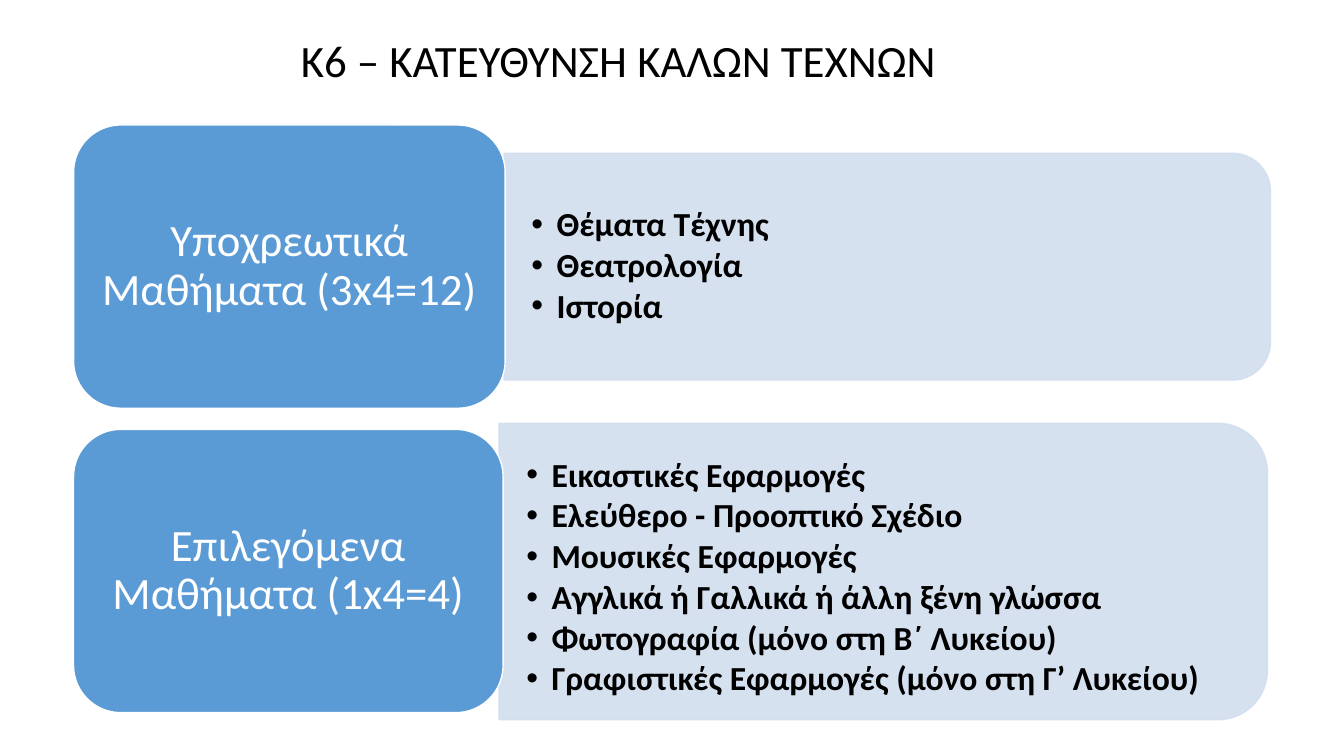
import pptx
import pptx.util
import pptx.dml.color
import pptx.enum.shapes
import pptx.enum.text
import pptx.oxml.ns
import lxml.etree

Inches, Pt = pptx.util.Inches, pptx.util.Pt
RGBColor = pptx.dml.color.RGBColor
Kind = pptx.enum.shapes.MSO_SHAPE
Align = pptx.enum.text.PP_ALIGN
qn = pptx.oxml.ns.qn

BLACK = RGBColor(0x00, 0x00, 0x00)
WHITE = RGBColor(0xFF, 0xFF, 0xFF)
BLUE = RGBColor(0x5B, 0x9B, 0xD5)
PALE = RGBColor(0xD2, 0xDE, 0xEF)

LEFT = 0.73    # left edge of the label column
TALL = 2.81    # height of a label
INSET = 0.27   # side margin of a list

deck = pptx.Presentation()
deck.slide_width, deck.slide_height = Inches(13.33), Inches(7.5)
slide = deck.slides.add_slide(deck.slide_layouts[3])
title, *lists = slide.placeholders


def place(shape, *box):
    shape.left, shape.top, shape.width, shape.height = map(Inches, box)


def write(shape, lines, side, edge, para, font):
    """Fill a shape with lines, using side and edge as margins in inches."""
    frame = shape.text_frame
    frame.text = "\n".join(lines)
    frame.word_wrap = True
    frame.auto_size = pptx.enum.text.MSO_AUTO_SIZE.NONE
    frame.vertical_anchor = pptx.enum.text.MSO_ANCHOR.MIDDLE
    frame.margin_left = frame.margin_right = Inches(side)
    frame.margin_top = frame.margin_bottom = Inches(edge)
    for line in frame.paragraphs:
        line.line_spacing = 0.9
        line.space_before = Pt(0)
        for name, value in para.items():
            setattr(line, name, value)
        line.font.name = "Calibri"
        line.font.color.rgb = font["color"]
        line.font.size = Pt(font["size"])
        line.font.bold = font["bold"]


center = {"alignment": Align.CENTER}
items = {"alignment": Align.LEFT, "space_after": Pt(3.2)}
large = {"size": 32, "bold": False}
strong = {"size": 24, "bold": True, "color": BLACK}

place(title, 0.72, 0.17, 10.83, 0.9)
write(title, ["Κ6 – ΚΑΤΕΥΘΥΝΣΗ ΚΑΛΩΝ ΤΕΧΝΩΝ"], 0.1, 0.05, center,
      {**large, "color": BLACK})

# label, label top, label width, panel box, list top, list height, courses
rows = [
    ("Υποχρεωτικά Μαθήματα (3x4=12)", 1.24, 4.28, (5, 1.52, 7.6, 2.25),
     1.63, 2.03,
     ["Θέματα Τέχνης", "Θεατρολογία", "Ιστορία"]),
    ("Επιλεγόμενα Μαθήματα (1x4=4)", 4.26, 4.26, (4.95, 4.2, 7.62, 2.94),
     4.41, 2.65,
     ["Εικαστικές Εφαρμογές", "Ελεύθερο - Προοπτικό Σχέδιο",
      "Μουσικές Εφαρμογές", "Αγγλικά ή Γαλλικά ή άλλη ξένη γλώσσα",
      "Φωτογραφία (μόνο στη Β΄ Λυκείου)",
      "Γραφιστικές Εφαρμογές (μόνο στη Γ’ Λυκείου)"]),
]

for body, row in zip(lists, rows):
    text, top, wide, (x, y, w, h), start, high, courses = row

    # The panel stands upright and is turned a quarter about its centre
    panel = slide.shapes.add_shape(
        Kind.ROUND_2_SAME_RECTANGLE, Inches(x + (w - h) / 2),
        Inches(y + (h - w) / 2), Inches(h), Inches(w))
    panel.rotation = 90
    label = slide.shapes.add_shape(
        Kind.ROUNDED_RECTANGLE, Inches(LEFT), Inches(top),
        Inches(wide), Inches(TALL))

    for shape, fill, line in ((panel, PALE, PALE), (label, BLUE, WHITE)):
        shape.shadow.inherit = False
        shape.fill.solid()
        shape.fill.fore_color.rgb = fill
        shape.line.color.rgb = line
        shape.line.width = Pt(1)
    for tint in panel.element.spPr.iter(qn("a:srgbClr")):
        lxml.etree.SubElement(tint, qn("a:alpha"), val="90000")

    write(label, [text], 0.13, 0.07, center, {**large, "color": WHITE})

    place(body, x, start, 7.48, high)
    write(body, courses, INSET, 0.07, items, strong)
    for props in body.element.iter(qn("a:pPr")):
        props.set("marL", str(Inches(0.25)))
        props.set("indent", str(-Inches(0.25)))
    body.element.getparent().append(body.element)  # bring list to front

deck.save("out.pptx")
